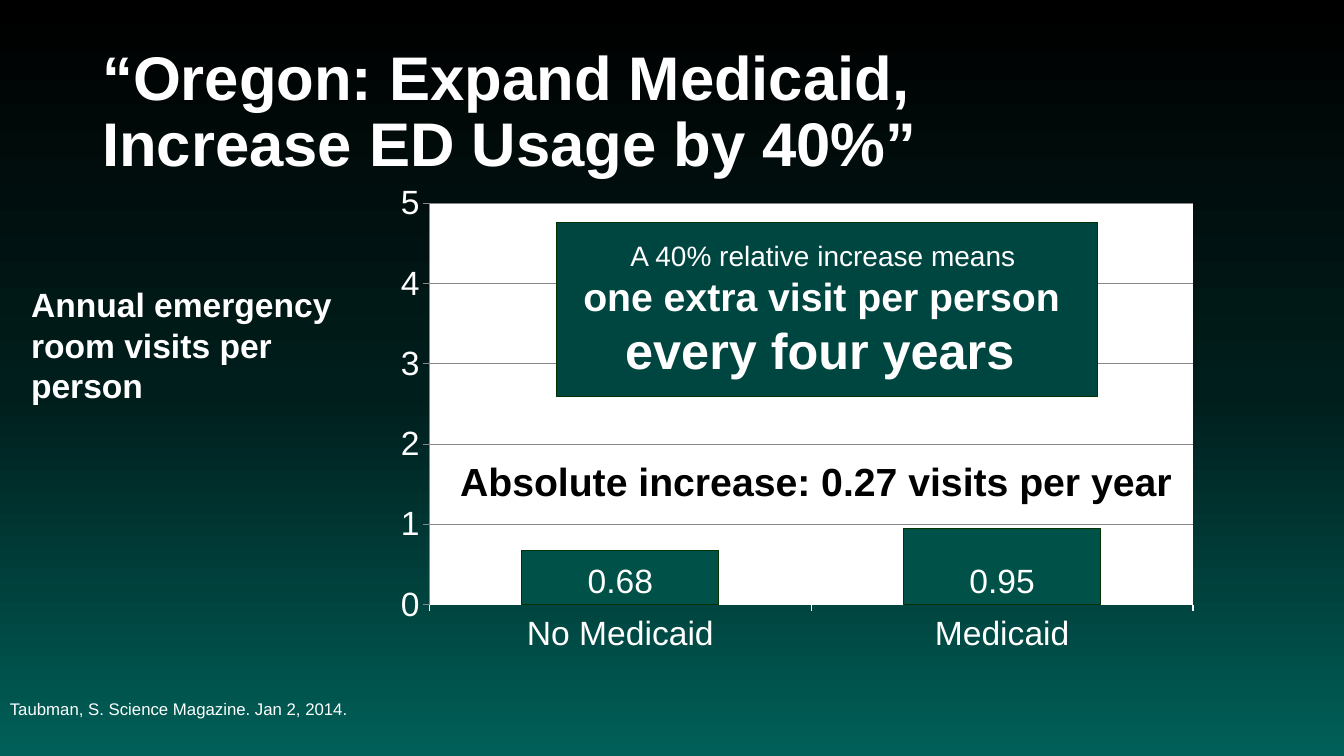
"""Build the slide on Medicaid expansion and emergency visits in Oregon."""
import dataclasses
from typing import Any, Optional

import lxml.etree
import pptx
import pptx.chart.data
import pptx.dml.color
import pptx.enum.chart
import pptx.enum.shapes
import pptx.enum.text
import pptx.oxml
import pptx.oxml.ns
import pptx.util

FONT = "Arial"
WHITE = "FFFFFF"
OUTLINE = "003300"
GRID = "878787"
BACKGROUND = ((0, "000000"), (52, "001E1C"), (100, "006059"))
PLOT = {"x": 0.055, "y": 0.059, "w": 0.925, "h": 0.823}
LEFT = pptx.enum.text.PP_ALIGN.LEFT
CENTER = pptx.enum.text.PP_ALIGN.CENTER
TOP = pptx.enum.text.MSO_ANCHOR.TOP
MIDDLE = pptx.enum.text.MSO_ANCHOR.MIDDLE


@dataclasses.dataclass(frozen=True)
class Line:
    text: str
    size: float
    bold: bool = True
    color: str = WHITE


@dataclasses.dataclass(frozen=True)
class Block:
    place: tuple[float, float, float, float]
    lines: tuple[Line, ...]
    align: Any = LEFT
    anchor: Any = TOP
    spacing: Optional[float] = None
    inset: float = 3.6
    fill: Optional[str] = None
    grow: bool = True


TITLE = Block(
    (66, 28.8, 828, 104.4),
    (Line("“Oregon: Expand Medicaid,\vIncrease ED Usage by 40%”", 44),),
    anchor=MIDDLE, spacing=0.9, grow=False,
)
SOURCE = Block(
    (0, 474, 648, 66),
    (Line("Taubman, S. Science Magazine. Jan 2, 2014.", 12, False),),
    anchor=MIDDLE, spacing=0.9, grow=False,
)
AXIS_NOTE = Block(
    (15.1, 199.4, 240.5, 94.3),
    (Line("Annual emergency room visits per person", 24),),
)
CALLOUT = Block(
    (397.4, 159.1, 386.6, 123.8),
    (
        Line("A 40% relative increase means ", 20, False),
        Line("one extra visit per person ", 28),
        Line("every four years ", 36),
    ),
    align=CENTER, anchor=MIDDLE, inset=10.8, fill="004640",
)
ABSOLUTE = Block(
    (317.5, 323.3, 530.6, 41),
    (Line("Absolute increase: 0.27 visits per year", 28, color="000000"),),
    align=CENTER,
)


def rgb(color: str) -> pptx.dml.color.RGBColor:
    return pptx.dml.color.RGBColor.from_string(color)


def points(place: tuple[float, ...]) -> list[pptx.util.Length]:
    return [pptx.util.Pt(value) for value in place]


def set_line(line: Any, color: str) -> None:
    line.color.rgb = rgb(color)
    line.width = pptx.util.Pt(0.75)


def set_font(font: Any, size: float, color: str, bold: bool = False) -> None:
    font.name = FONT
    font.size = pptx.util.Pt(size)
    font.bold = bold
    font.color.rgb = rgb(color)


def set_background(page: Any) -> None:
    fill = page.background.fill
    fill.gradient()
    fill.gradient_angle = 270
    stops = page.element.find(".//" + pptx.oxml.ns.qn("a:gsLst"))
    for stop in list(stops):
        stops.remove(stop)
    for percent, color in BACKGROUND:
        stop = lxml.etree.SubElement(stops, pptx.oxml.ns.qn("a:gs"), pos=str(percent * 1000))
        lxml.etree.SubElement(stop, pptx.oxml.ns.qn("a:srgbClr"), val=color)


def add_block(page: Any, block: Block) -> None:
    if block.fill:
        box = page.shapes.add_shape(
            pptx.enum.shapes.MSO_SHAPE.RECTANGLE, *points(block.place))
        box.shadow.inherit = False
        box.fill.solid()
        box.fill.fore_color.rgb = rgb(block.fill)
        set_line(box.line, OUTLINE)
    else:
        box = page.shapes.add_textbox(*points(block.place))
    frame = box.text_frame
    frame.word_wrap = True
    sizing = pptx.enum.text.MSO_AUTO_SIZE
    frame.auto_size = sizing.SHAPE_TO_FIT_TEXT if block.grow else sizing.NONE
    frame.vertical_anchor = block.anchor
    frame.margin_top = frame.margin_bottom = pptx.util.Pt(block.inset)
    for index, line in enumerate(block.lines):
        para = frame.add_paragraph() if index else frame.paragraphs[0]
        para.alignment = block.align
        if block.spacing:
            para.line_spacing = block.spacing
        for part, text in enumerate(line.text.split("\v")):
            if part:
                para.add_line_break()
            span = para.add_run()
            span.text = text
            set_font(span.font, line.size, line.color, line.bold)


def style_plot_area(chart: Any) -> None:
    area = chart.element.find(".//" + pptx.oxml.ns.qn("c:plotArea"))
    for old in area.findall(pptx.oxml.ns.qn("c:layout")):
        area.remove(old)
    sizes = "".join(f'<c:{name} val="{value}"/>' for name, value in PLOT.items())
    area.insert(0, pptx.oxml.parse_xml(
        f'<c:layout {pptx.oxml.ns.nsdecls("c")}><c:manualLayout>'
        '<c:layoutTarget val="inner"/><c:xMode val="edge"/><c:yMode val="edge"/>'
        f'{sizes}</c:manualLayout></c:layout>'))
    area.append(pptx.oxml.parse_xml(
        f'<c:spPr {pptx.oxml.ns.nsdecls("c", "a")}><a:solidFill>'
        f'<a:srgbClr val="{WHITE}"/></a:solidFill></c:spPr>'))


def add_visits_chart(page: Any) -> None:
    data = pptx.chart.data.CategoryChartData()
    data.categories = ["No Medicaid", "Medicaid"]
    data.add_series("Series 1", (0.68, 0.95))
    chart = page.shapes.add_chart(
        pptx.enum.chart.XL_CHART_TYPE.COLUMN_CLUSTERED,
        *points((274.3, 124.6, 589.7, 348.5)), data).chart
    chart.has_legend = False
    chart.has_title = False
    set_font(chart.font, 24, WHITE)
    for axis in (chart.category_axis, chart.value_axis):
        axis.major_tick_mark = pptx.enum.chart.XL_TICK_MARK.OUTSIDE
        axis.minor_tick_mark = pptx.enum.chart.XL_TICK_MARK.NONE
        set_font(axis.tick_labels.font, 24, WHITE)
    set_line(chart.category_axis.format.line, WHITE)
    set_line(chart.value_axis.format.line, GRID)
    chart.value_axis.minimum_scale = 0
    chart.value_axis.maximum_scale = 5
    chart.value_axis.major_unit = 1
    chart.value_axis.has_major_gridlines = True
    set_line(chart.value_axis.major_gridlines.format.line, GRID)
    plot = chart.plots[0]
    plot.gap_width = 94
    plot.vary_by_categories = False
    bars = plot.series[0]
    bars.format.fill.solid()
    bars.format.fill.fore_color.rgb = rgb("005148")
    set_line(bars.format.line, OUTLINE)
    labels = bars.data_labels
    labels.show_value = True
    labels.position = pptx.enum.chart.XL_LABEL_POSITION.INSIDE_BASE
    labels.number_format = "#,##0.00"
    labels.number_format_is_linked = False
    set_font(labels.font, 24, WHITE)
    style_plot_area(chart)


def main() -> None:
    deck = pptx.Presentation()
    deck.slide_width = pptx.util.Pt(960)
    deck.slide_height = pptx.util.Pt(540)
    page = deck.slides.add_slide(deck.slide_layouts[6])
    set_background(page)
    add_visits_chart(page)
    for block in (TITLE, SOURCE, AXIS_NOTE, CALLOUT, ABSOLUTE):
        add_block(page, block)
    deck.save("out.pptx")


if __name__ == "__main__":
    main()
